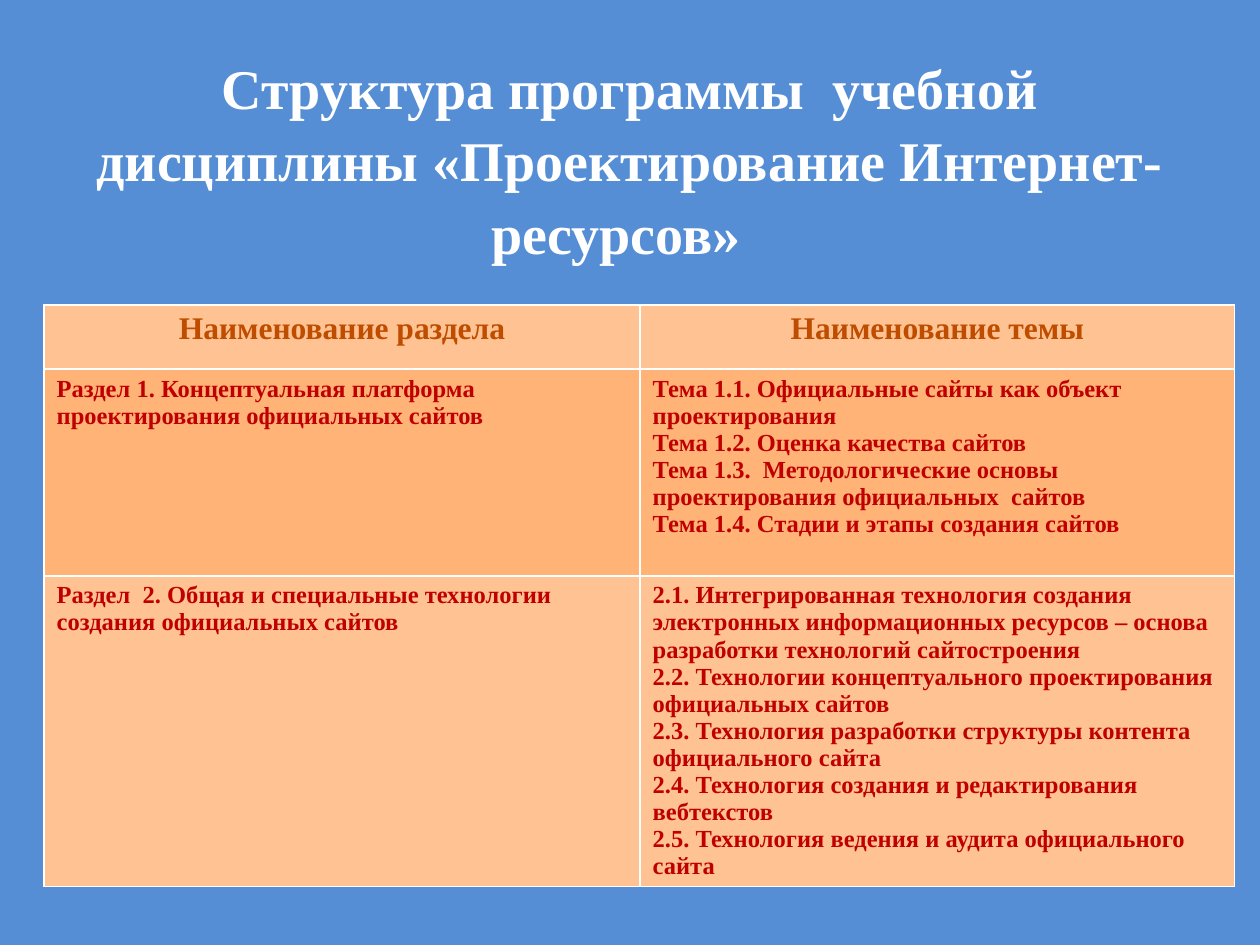
from dataclasses import dataclass

from lxml.etree import SubElement
from pptx import Presentation
from pptx.dml.color import RGBColor as RGB
from pptx.enum.text import MSO_ANCHOR as ANCHOR, MSO_AUTO_SIZE as AUTO, PP_ALIGN as ALIGN
from pptx.oxml.ns import qn
from pptx.util import Inches, Pt


@dataclass(frozen=True)
class Theme:
    font: str = "Times New Roman"
    background: str = "558ED5"
    white: str = "FFFFFF"
    header: str = "BF4D00"
    body: str = "C00000"
    bands: tuple = ("FFC292", "FFB377")
    title_size: int = 32
    header_size: int = 18
    body_size: int = 14
    border: int = 1


class Builder:
    def __init__(self, prs, theme):
        self.theme = theme
        self.s = prs.slides.add_slide(prs.slide_layouts[5])
        fill = self.s.background.fill
        fill.solid()
        fill.fore_color.rgb = RGB.from_string(theme.background)

    def add_lines(self, tf, lines, size, color, align):
        """Add one paragraph per line, all in the same bold style."""
        fmt = {"name": self.theme.font, "size": Pt(size), "bold": True}
        for i, line in enumerate(lines):
            p = tf.paragraphs[0] if i == 0 else tf.add_paragraph()
            p.alignment = align
            r = p.add_run()
            r.text = line
            for key, value in fmt.items():
                setattr(r.font, key, value)
            r.font.color.rgb = RGB.from_string(color)

    def title(self, text, left, top, width, height):
        sp = self.s.shapes.title
        box = {"left": left, "top": top, "width": width, "height": height}
        for key, value in box.items():
            setattr(sp, key, Inches(value))
        tf = sp.text_frame
        tf.auto_size = AUTO.NONE
        tf.vertical_anchor = ANCHOR.MIDDLE
        self.add_lines(tf, [text], self.theme.title_size, self.theme.white, ALIGN.CENTER)
        tf.paragraphs[0].line_spacing = 1.08

    def borders(self, cell):
        pr = cell._tc.get_or_add_tcPr()
        for i, side in enumerate(("a:lnL", "a:lnR", "a:lnT", "a:lnB")):
            ln = pr.makeelement(qn(side), {"w": str(Pt(self.theme.border))})
            SubElement(SubElement(ln, qn("a:solidFill")), qn("a:srgbClr"), val=self.theme.white)
            pr.insert(i, ln)  # borders come before the fill

    def table(self, rows, left, top, widths, heights):
        t = self.theme
        size = Inches(sum(widths)), Inches(sum(heights))
        table = self.s.shapes.add_table(
            len(rows), len(widths), Inches(left), Inches(top), *size).table
        for col, width in zip(table.columns, widths):
            col.width = Inches(width)
        for i, (row, height) in enumerate(zip(rows, heights)):
            table.rows[i].height = Inches(height)
            style = ((t.header_size, t.header, ALIGN.CENTER) if i == 0
                     else (t.body_size, t.body, ALIGN.LEFT))
            for j, lines in enumerate(row):
                cell = table.cell(i, j)
                cell.fill.solid()
                cell.fill.fore_color.rgb = RGB.from_string(t.bands[i % 2])
                self.borders(cell)
                self.add_lines(cell.text_frame, lines, *style)


# Header row, then one row per section with its topics
ROWS = [
    (["Наименование раздела"], ["Наименование темы"]),
    (["Раздел 1. Концептуальная платформа проектирования официальных сайтов"],
     ["Тема 1.1. Официальные сайты как объект проектирования",
      "Тема 1.2. Оценка качества сайтов",
      "Тема 1.3.  Методологические основы проектирования официальных  сайтов",
      "Тема 1.4. Стадии и этапы создания сайтов"]),
    (["Раздел  2. Общая и специальные технологии создания официальных сайтов"],
     ["2.1. Интегрированная технология создания электронных информационных "
      "ресурсов – основа разработки технологий сайтостроения",
      "2.2. Технологии концептуального проектирования официальных сайтов",
      "2.3. Технология разработки структуры контента официального сайта",
      "2.4. Технология создания и редактирования вебтекстов",
      "2.5. Технология ведения и аудита официального сайта"]),
]


def main():
    prs = Presentation()
    prs.slide_width, prs.slide_height = Inches(10), Inches(7.5)
    slide = Builder(prs, Theme())

    # Title
    slide.title("Структура программы  учебной дисциплины "
                "«Проектирование Интернет-ресурсов»  ", 0.5, 0.62, 9, 1.25)

    # Programme table
    slide.table(ROWS, 0.35, 2.42, widths=(4.73, 4.72), heights=(0.51, 1.64, 2.46))

    prs.save("out.pptx")


if __name__ == "__main__":
    main()
